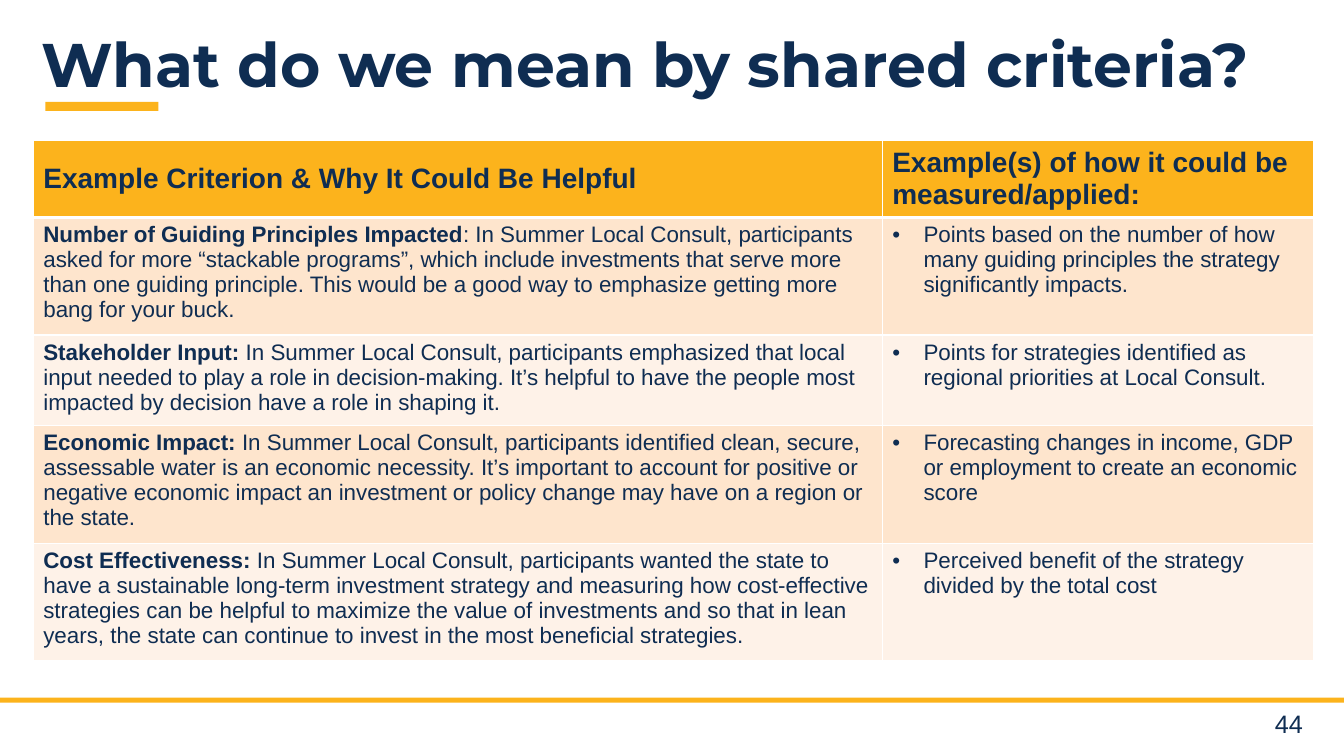
"""Build the slide on shared criteria, with a table of examples."""
import pptx
import pptx.util
import pptx.dml.color
import pptx.enum.shapes
import pptx.enum.text
import pptx.oxml
import pptx.oxml.ns

Inches, Pt = pptx.util.Inches, pptx.util.Pt
Align, Anchor = pptx.enum.text.PP_ALIGN, pptx.enum.text.MSO_ANCHOR

TITLE = "What do we mean by shared criteria?"
PAGE = "44"
HEADS = ("Example Criterion & Why It Could Be Helpful",
         "Example(s) of how it could be measured/applied:")
ROWS = [
    ("Number of Guiding Principles Impacted",
     ": In Summer Local Consult, participants asked for more “stackable programs”, which include "
     "investments that serve more than one guiding principle. This would be a good way to "
     "emphasize getting more bang for your buck.",
     "Points based on the number of how many guiding principles the strategy significantly impacts."),
    ("Stakeholder Input:",
     " In Summer Local Consult, participants emphasized that local input needed to play a role in "
     "decision-making. It’s helpful to have the people most impacted by decision have a role in "
     "shaping it.",
     "Points for strategies identified as regional priorities at Local Consult."),
    ("Economic Impact: ",
     "In Summer Local Consult, participants identified clean, secure, assessable water is an "
     "economic necessity. It’s important to account for positive or negative economic impact an "
     "investment or policy change may have on a region or the state.",
     "Forecasting changes in income, GDP or employment to create an economic score"),
    ("Cost Effectiveness: ",
     "In Summer Local Consult, participants wanted the state to have a sustainable long-term "
     "investment strategy and measuring how cost-effective strategies can be helpful to maximize "
     "the value of investments and so that in lean years, the state can continue to invest in the "
     "most beneficial strategies.",
     "Perceived benefit of the strategy divided by the total cost"),
]
BARS = [(0, 6.92, 13.33, 0.05), (0.45, 1.01, 1.12, 0.09)]
WIDTHS = (8.42, 4.28)
HEIGHTS = (0.71, 1.09, 0.84, 1.09, 1.09)
INDENT = 0.31

THEME = {
    "ink": "0F2D52", "gold": "FCB31C", "line": "FFFFFF", "bands": ("FEE5CD", "FEF2E8"),
    "title": {"name": "Montserrat", "size": Pt(44), "bold": True},
    "page": {"name": "Arial", "size": Pt(18), "bold": False},
    "head": {"name": "Arial", "size": Pt(20), "bold": True},
    "key": {"name": "Arial", "size": Pt(16), "bold": True},
    "body": {"name": "Arial", "size": Pt(16), "bold": False},
}


def paint(fill, color):
    fill.solid()
    fill.fore_color.rgb = pptx.dml.color.RGBColor.from_string(color)


def write(para, text, style):
    run = para.add_run()
    run.text = text
    for name, value in THEME[style].items():
        setattr(run.font, name, value)
    paint(run.font.fill, THEME["ink"])


def label(slide, box, text, style, **form):
    frame = slide.shapes.add_textbox(*map(Inches, box)).text_frame
    frame.word_wrap = True
    frame.vertical_anchor = Anchor.MIDDLE
    para = frame.paragraphs[0]
    for name, value in form.items():
        setattr(para, name, value)
    write(para, text, style)


def border(cell, row):
    props = cell._tc.get_or_add_tcPr()
    thick = {"T": row == 1, "B": row == 0}
    for side in "LRTB":
        width = Pt(3 if thick.get(side) else 1)
        props.append(pptx.oxml.parse_xml(
            f'<a:ln{side} {pptx.oxml.ns.nsdecls("a")} w="{width}"><a:solidFill>'
            f'<a:srgbClr val="{THEME["line"]}"/></a:solidFill></a:ln{side}>'))


def bullet(para):
    props = para._p.get_or_add_pPr()
    props.set("marL", str(Inches(INDENT)))
    props.set("indent", str(-Inches(INDENT)))
    for tag in ('buFont {} typeface="Arial"', 'buChar {} char="•"'):
        props.append(pptx.oxml.parse_xml(f'<a:{tag.format(pptx.oxml.ns.nsdecls("a"))}/>'))


def fill_table(slide):
    size = (len(ROWS) + 1, len(WIDTHS))
    box = (0.33, 1.39, sum(WIDTHS), sum(HEIGHTS))
    table = slide.shapes.add_table(*size, *map(Inches, box)).table
    for col, width in zip(table.columns, WIDTHS):
        col.width = Inches(width)
    for row, height in zip(table.rows, HEIGHTS):
        row.height = Inches(height)
    cells = [[((text, "head"),) for text in HEADS]]
    cells += [[((key, "key"), (why, "body")), ((how, "body"),)] for key, why, how in ROWS]
    for r, line in enumerate(cells):
        for c, runs in enumerate(line):
            cell = table.cell(r, c)
            border(cell, r)
            paint(cell.fill, THEME["bands"][(r - 1) % 2] if r else THEME["gold"])
            cell.vertical_anchor = Anchor.TOP if r else Anchor.MIDDLE
            para = cell.text_frame.paragraphs[0]
            if r and c:
                bullet(para)
            for text, style in runs:
                write(para, text, style)


def main():
    deck = pptx.Presentation()
    deck.slide_width, deck.slide_height = Inches(13.33), Inches(7.5)
    slide = deck.slides.add_slide(deck.slide_layouts[6])
    for box in BARS:
        bar = slide.shapes.add_shape(pptx.enum.shapes.MSO_SHAPE.RECTANGLE, *map(Inches, box))
        bar.shadow.inherit = False
        paint(bar.fill, THEME["gold"])
        bar.line.fill.background()
    label(slide, (12.08, 7, 0.94, 0.35), PAGE, "page", alignment=Align.RIGHT)
    label(slide, (0.31, 0.24, 12.72, 0.85), TITLE, "title", line_spacing=0.9)
    fill_table(slide)
    deck.save("out.pptx")


if __name__ == "__main__":
    main()
